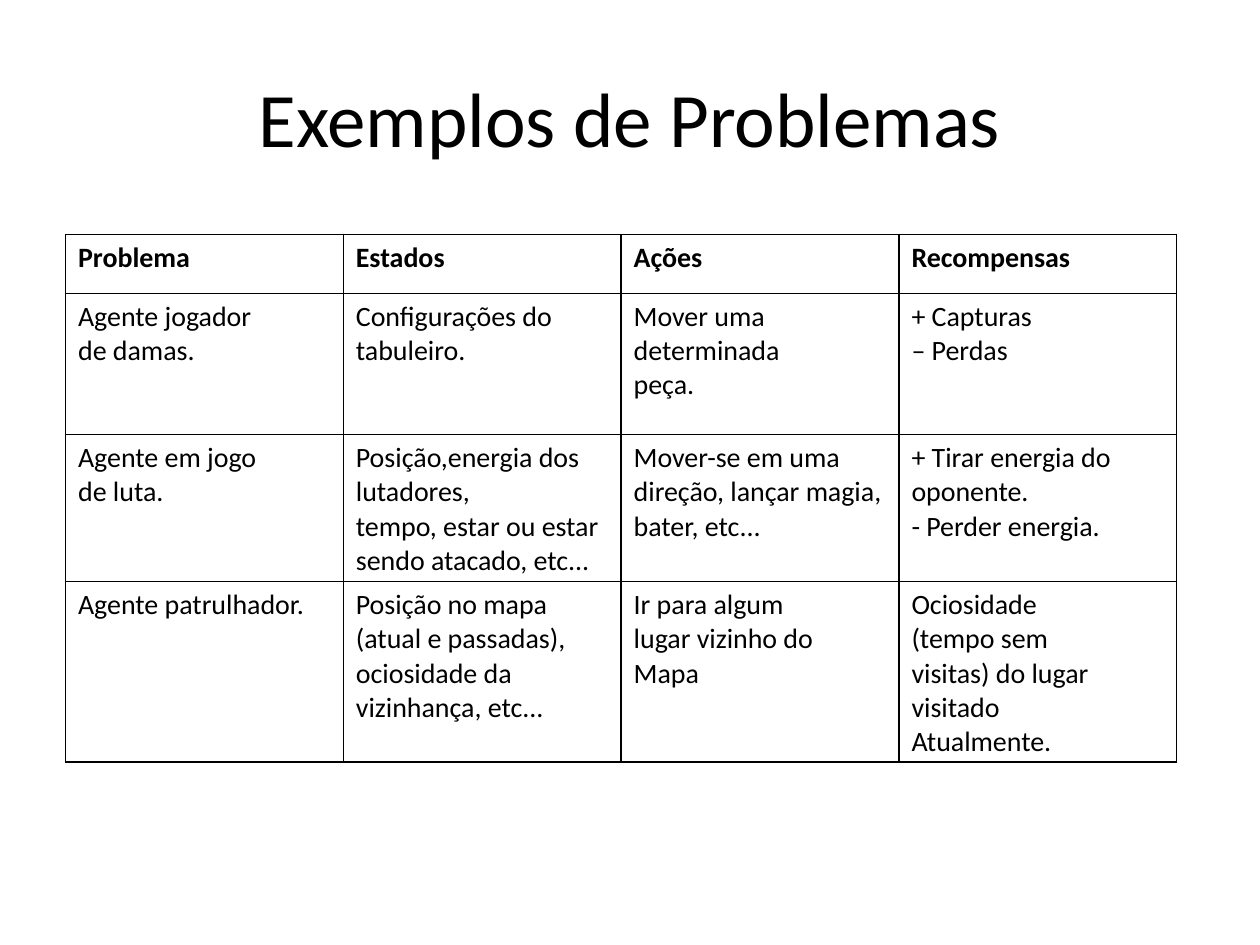
from lxml.etree import SubElement
from pptx import Presentation
from pptx.dml.color import RGBColor
from pptx.enum.text import MSO_ANCHOR, PP_ALIGN
from pptx.oxml.ns import qn
from pptx.util import Inches, Pt

COLORS = {"text": "000000", "line": "000000", "paper": "FFFFFF"}
FONT = "Calibri"
HEADS = ["Problema", "Estados", "Ações", "Recompensas"]
ROWS = [
    ["Agente jogador\nde damas.",
     "Configurações do tabuleiro.",
     "Mover uma\ndeterminada\npeça.",
     "+ Capturas\n– Perdas"],
    ["Agente em jogo\nde luta.",
     "Posição,energia dos lutadores,\n"
     "tempo, estar ou estar sendo atacado, etc...",
     "Mover-se em uma direção, lançar magia, bater, etc...",
     "+ Tirar energia do oponente.\n- Perder energia."],
    ["Agente patrulhador.",
     "Posição no mapa\n(atual e passadas),\nociosidade da\nvizinhança, etc...",
     "Ir para algum\nlugar vizinho do\nMapa",
     "Ociosidade\n(tempo sem\nvisitas) do lugar\nvisitado\nAtualmente."],
]


def write(frame, text, size, bold=False, align=PP_ALIGN.LEFT):
    frame.text = text
    frame.word_wrap = True
    for para in frame.paragraphs:
        para.alignment = align
        font = para.font
        font.name, font.size, font.bold = FONT, Pt(size), bold
        font.color.rgb = RGBColor.from_string(COLORS["text"])


def add_borders(cell):
    props = cell._tc.get_or_add_tcPr()
    for side in ("lnL", "lnR", "lnT", "lnB"):
        line = SubElement(props, qn(f"a:{side}"), w=str(Pt(1)))
        fill = SubElement(line, qn("a:solidFill"))
        SubElement(fill, qn("a:srgbClr"), val=COLORS["line"])


def add_title(slide, left, top, width, height):
    frame = slide.shapes.add_textbox(left, top, width, height).text_frame
    frame.vertical_anchor = MSO_ANCHOR.MIDDLE
    write(frame, "Exemplos de Problemas", 44, align=PP_ALIGN.CENTER)


def add_grid(slide, left, top, width, heights):
    data = [HEADS] + ROWS
    table = slide.shapes.add_table(
        len(data), len(HEADS), left, top, width, sum(heights)).table
    table.horz_banding = False
    for col in table.columns:
        col.width = width // len(HEADS)
    for r, texts in enumerate(data):
        table.rows[r].height = heights[r]
        for c, text in enumerate(texts):
            cell = table.cell(r, c)
            write(cell.text_frame, text, 16, bold=r == 0)
            add_borders(cell)
            cell.fill.solid()
            cell.fill.fore_color.rgb = RGBColor.from_string(COLORS["paper"])


def main():
    deck = Presentation()
    deck.slide_width, deck.slide_height = Inches(10), Inches(7.5)
    slide = deck.slides.add_slide(deck.slide_layouts[6])
    add_title(slide, Inches(0.5), Inches(0.3), Inches(9), Inches(1.25))
    add_grid(slide, Inches(0.52), Inches(1.86), Inches(8.82),
             [Inches(0.47)] + [Inches(1.12)] * len(ROWS))
    deck.save("out.pptx")


if __name__ == "__main__":
    main()
